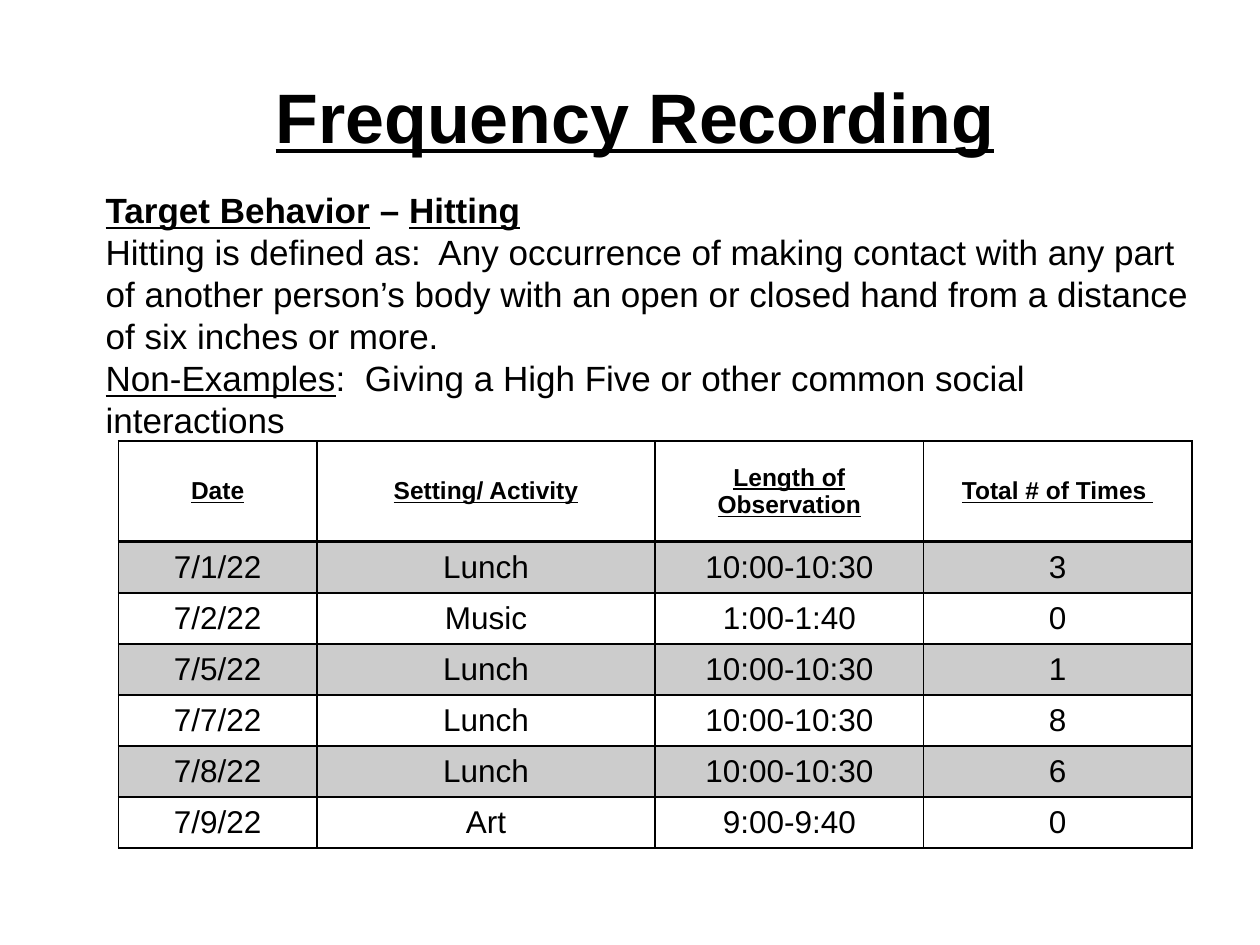
from itertools import product

from lxml.etree import SubElement
from pptx import Presentation
from pptx.dml.color import RGBColor
from pptx.enum.text import MSO_ANCHOR as Anchor, PP_ALIGN as Align
from pptx.oxml.ns import qn
from pptx.util import Inches, Pt

COLUMNS, ROWS = 100, 75
BOLD, UNDERLINE, PLAIN = {"bold": True}, {"underline": True}, {}
HEADING = BOLD | UNDERLINE

DEFINITION = [
    [("Target Behavior", HEADING), (" – ", BOLD), ("Hitting", HEADING)],
    [("Hitting is defined as:  Any occurrence of making contact with any part "
      "of another person’s body with an open or closed hand from a distance "
      "of six inches or more.", PLAIN)],
    [("Non-Examples", UNDERLINE),
     (":  Giving a High Five or other common social interactions", PLAIN)],
]

OBSERVATIONS = [
    ("Date", "Setting/ Activity", "Length of Observation", "Total # of Times "),
    ("7/1/22", "Lunch", "10:00-10:30", "3"),
    ("7/2/22", "Music", "1:00-1:40", "0"),
    ("7/5/22", "Lunch", "10:00-10:30", "1"),
    ("7/7/22", "Lunch", "10:00-10:30", "8"),
    ("7/8/22", "Lunch", "10:00-10:30", "6"),
    ("7/9/22", "Art", "9:00-9:40", "0"),
]


def color(hex_string):
    return RGBColor.from_string(hex_string)


class SlideBuilder:
    font_name = "Arial"
    ink = "000000"
    band_alpha = 20

    def __init__(self, deck):
        self.slide = deck.slides.add_slide(deck.slide_layouts[6])
        self.unit_x = deck.slide_width / COLUMNS
        self.unit_y = deck.slide_height / ROWS

    def x(self, columns):
        return round(columns * self.unit_x)

    def y(self, rows):
        return round(rows * self.unit_y)

    def place(self, left, top, width, height):
        return self.x(left), self.y(top), self.x(width), self.y(height)

    def format(self, run, size, bold=False, underline=False):
        font = run.font
        font.name, font.size = self.font_name, Pt(size)
        font.bold, font.underline = bold, underline
        font.color.rgb = color(self.ink)

    def text(self, area, paragraphs, size, align=Align.LEFT, anchor=Anchor.TOP):
        frame = self.slide.shapes.add_textbox(*self.place(*area)).text_frame
        frame.word_wrap = True
        frame.vertical_anchor = anchor
        for index, pieces in enumerate(paragraphs):
            paragraph = frame.add_paragraph() if index else frame.paragraphs[0]
            paragraph.alignment = align
            for words, style in pieces:
                run = paragraph.add_run()
                run.text = words
                self.format(run, size, **style)

    def borders(self, cell, widths):
        properties = cell._tc.get_or_add_tcPr()
        for side, width in zip("LRTB", widths):
            line = SubElement(properties, qn(f"a:ln{side}"), w=str(Pt(width)))
            fill = SubElement(line, qn("a:solidFill"))
            SubElement(fill, qn("a:srgbClr"), val=self.ink)

    def shade(self, cell):
        cell.fill.solid()
        cell.fill.fore_color.rgb = color(self.ink)
        tint = cell._tc.tcPr.find(qn("a:solidFill")).find(qn("a:srgbClr"))
        SubElement(tint, qn("a:alpha"), val=str(self.band_alpha * 1000))

    def table(self, area, records, widths, heights):
        shape = self.slide.shapes.add_table(
            len(records), len(widths), *self.place(*area))
        table = shape.table
        table.first_row = table.horz_banding = False
        for column, width in zip(table.columns, widths):
            column.width = self.x(width)
        for row, height in zip(table.rows, heights):
            row.height = self.y(height)
        for r, c in product(range(len(records)), range(len(widths))):
            cell = table.cell(r, c)
            cell.text_frame.text = records[r][c]
            cell.vertical_anchor = Anchor.MIDDLE
            paragraph = cell.text_frame.paragraphs[0]
            paragraph.alignment = Align.CENTER
            header = r == 0
            self.format(paragraph.runs[0], 14 if header else 18,
                        **(HEADING if header else PLAIN))
            self.borders(cell, (1, 1, 2 if r == 1 else 1, 2 if header else 1))
            if r % 2:
                self.shade(cell)
            else:
                cell.fill.background()


def main():
    deck = Presentation()
    deck.slide_width, deck.slide_height = Inches(10), Inches(7.5)
    page = SlideBuilder(deck)
    page.text((5.8, 5.8, 89.2, 7.2), [[("Frequency Recording", HEADING)]], 40,
              Align.CENTER, Anchor.BOTTOM)
    page.table((9.4, 35, 85.2, 32.3), OBSERVATIONS,
               (15.75, 26.85, 21.3, 21.3), [8] + [4.05] * 6)
    page.text((7.4, 14.5, 89.2, 24.6), DEFINITION, 20)
    deck.save("out.pptx")


if __name__ == "__main__":
    main()
